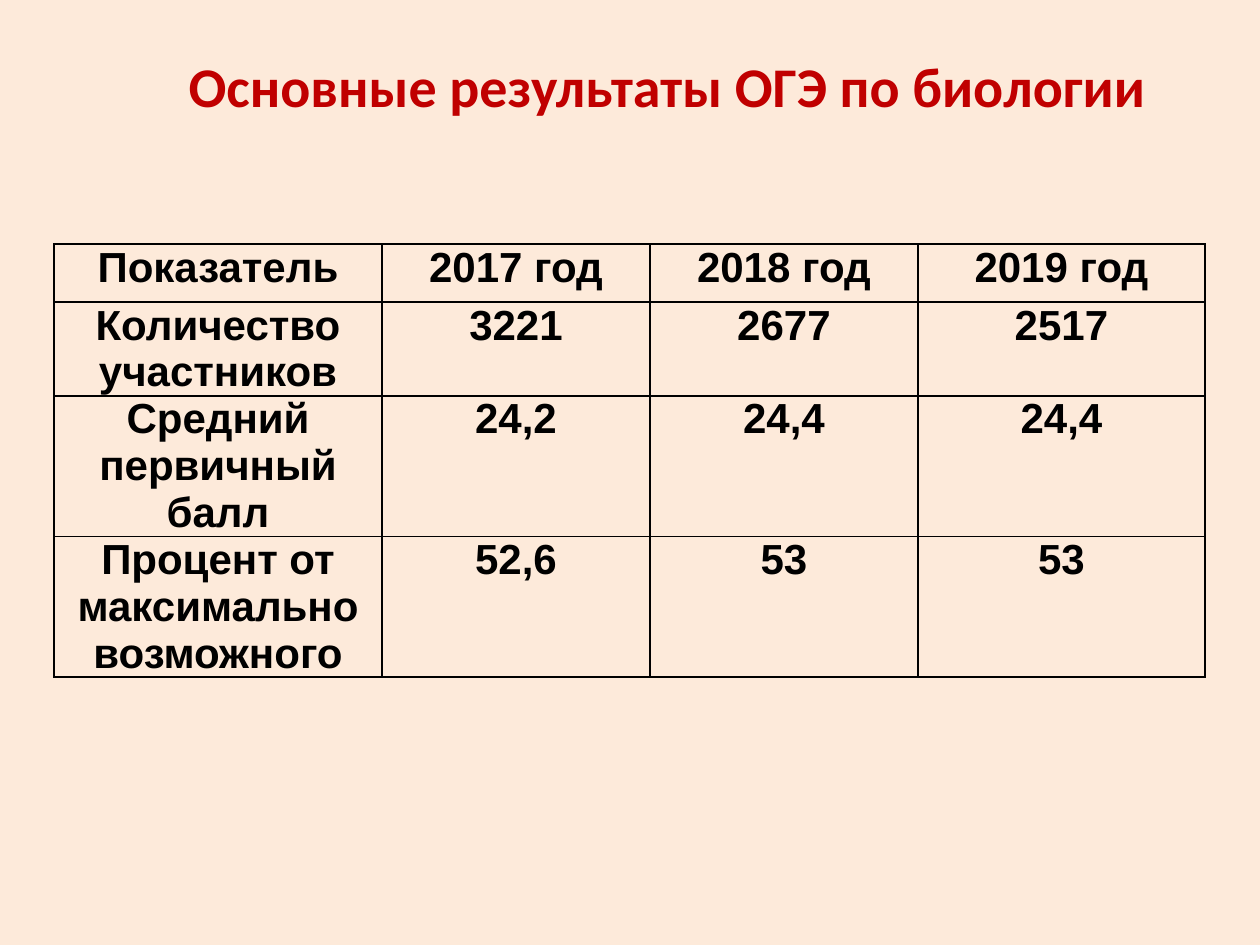
from lxml import etree
from pptx import Presentation
from pptx import util as u
from pptx.dml.color import RGBColor
from pptx.enum import text
from pptx.oxml.ns import qn

C = {"bg": "FDEADA", "title": "C00000", "ink": "000000"}
EMU_PER_INCH, PX_PER_INCH = 914400, 126


def px(n):
    return u.Emu(round(n * EMU_PER_INCH / PX_PER_INCH))


def write(tf, content, size, name, color):
    """Fill a text frame with one bold, centred paragraph and return it."""
    p = tf.paragraphs[0]
    p.alignment = text.PP_ALIGN.CENTER
    r = p.add_run()
    r.text = content
    for key, value in {"size": u.Pt(size), "name": name, "bold": True}.items():
        setattr(r.font, key, value)
    r.font.color.rgb = RGBColor.from_string(C[color])
    return p


prs = Presentation()
prs.slide_width, prs.slide_height = px(1260), px(945)
s = prs.slides.add_slide(prs.slide_layouts[6])
s.background.fill.solid()
s.background.fill.fore_color.rgb = RGBColor.from_string(C["bg"])

# Results table
rows = [
    ["Показатель", "2017 год", "2018 год", "2019 год"],
    ["Количество участников", "3221", "2677", "2517"],
    ["Средний первичный балл", "24,2", "24,4", "24,4"],
    ["Процент от максимально возможного", "52,6", "53", "53"],
]
col_widths = [328, 268, 268, 287]
row_heights = [58, 94, 140, 140]
table = s.shapes.add_table(len(rows), len(col_widths), px(54), px(244),
                           px(sum(col_widths)), px(sum(row_heights))).table
for col, width in zip(table.columns, col_widths):
    col.width = px(width)
for row, height in zip(table.rows, row_heights):
    row.height = px(height)

cell_format = {"margin_left": px(9), "margin_right": px(9),
               "margin_top": 0, "margin_bottom": 0}
for i, values in enumerate(rows):
    for j, value in enumerate(values):
        cell = table.cell(i, j)
        for key, setting in cell_format.items():
            setattr(cell, key, setting)
        cell.fill.background()
        write(cell.text_frame, value, 24, "Arial", "ink")
        tcPr = cell._tc.get_or_add_tcPr()
        for k, side in enumerate(["lnL", "lnR", "lnT", "lnB"]):
            ln = etree.Element(qn(f"a:{side}"), w=str(u.Pt(1)))
            fill = etree.SubElement(ln, qn("a:solidFill"))
            etree.SubElement(fill, qn("a:srgbClr"), val=C["ink"])
            tcPr.insert(k, ln)

# Title
tf = s.shapes.add_textbox(px(154), px(45), px(1027), px(96)).text_frame
tf.word_wrap = True
p = write(tf, "Основные результаты ОГЭ по биологии", 32, "Calibri", "title")
p.space_before = u.Pt(3.5)

prs.save("out.pptx")
